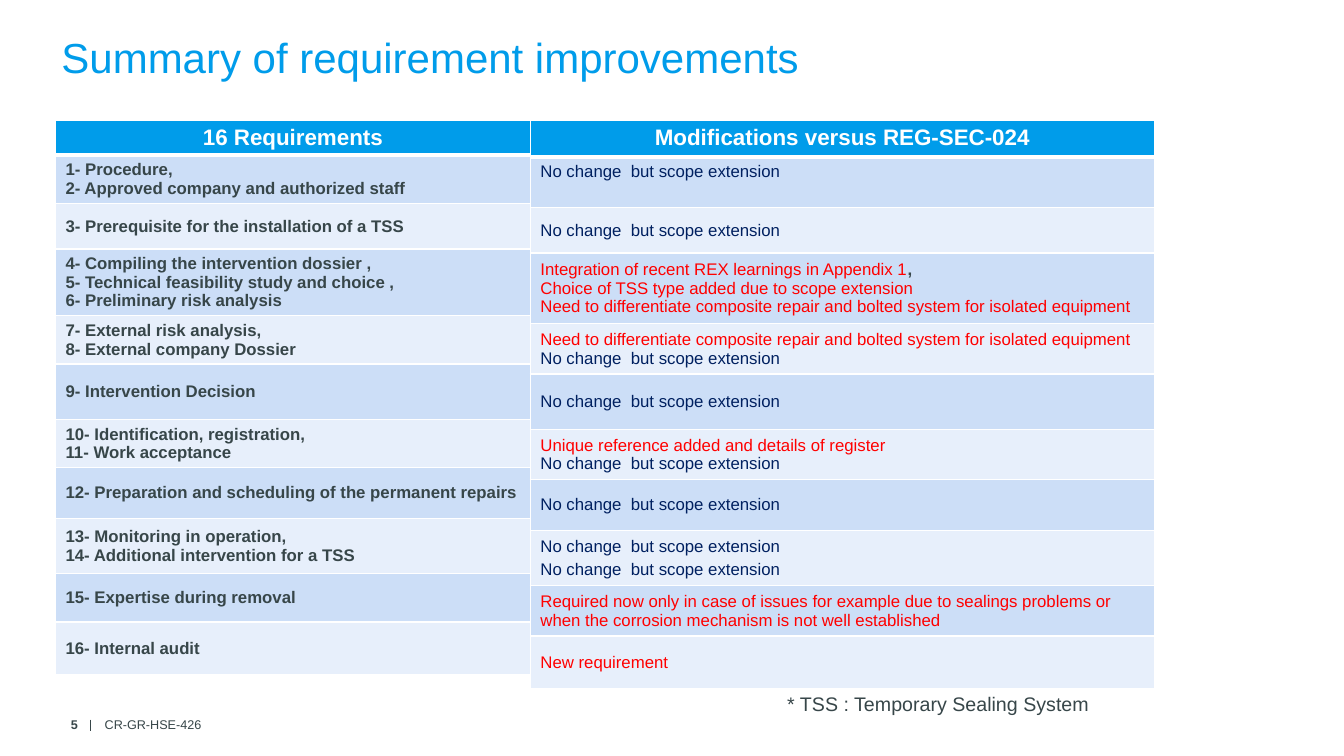
from dataclasses import dataclass

from lxml import etree
from pptx import Presentation
from pptx.dml.color import RGBColor
from pptx.enum import shapes, text
from pptx.oxml import ns
from pptx.util import Inches, Pt


# Theme: colours and type sizes
@dataclass(frozen=True)
class Theme:
    face: str = "Arial"
    blue: str = "009CEA"
    grey: str = "374649"
    navy: str = "002060"
    red: str = "FF0000"
    white: str = "FFFFFF"
    bands: tuple[str, str] = ("CCDEF7", "E7EFFB")
    title: int = 30
    head: int = 16
    note: int = 14
    body: int = 12
    foot: int = 9


T = Theme()


@dataclass
class Line:
    words: str
    color: str = T.navy
    bold: bool = False
    tail: str = ""


@dataclass
class Row:
    height: float
    lines: list[Line]
    gap: int = 0
    top: bool = False


@dataclass
class Grid:
    left: float
    width: float
    head: str
    rise: float
    rows: list[Row]


@dataclass
class Label:
    words: str
    box: tuple[float, float, float, float]
    size: int
    bold: bool = False
    align: text.PP_ALIGN = text.PP_ALIGN.LEFT
    anchor: text.MSO_ANCHOR = text.MSO_ANCHOR.MIDDLE


def need(height: float, *names: str) -> Row:
    return Row(height, [Line(n, T.grey, True) for n in names])


# Content
SAME = Line("No change  but scope extension")
SPLIT = Line("Need to differentiate composite repair and bolted system "
             "for isolated equipment", T.red)
TOP = 1.19

GRIDS = [
    Grid(0.55, 4.71, "16 Requirements", 0.35, [
        need(0.48, "1- Procedure,", "2- Approved company and authorized staff"),
        need(0.45, "3- Prerequisite for the installation of a TSS"),
        need(0.66, "4- Compiling the intervention dossier ,",
             "5- Technical feasibility study and choice ,",
             "6- Preliminary risk analysis"),
        need(0.48, "7- External risk analysis,", "8- External company Dossier"),
        need(0.55, "9- Intervention Decision"),
        need(0.48, "10- Identification, registration,", "11- Work acceptance"),
        need(0.5, "12- Preparation and scheduling of the permanent repairs"),
        need(0.55, "13- Monitoring in operation,",
             "14- Additional intervention for a TSS"),
        need(0.48, "15- Expertise during removal"),
        need(0.52, "16- Internal audit"),
    ]),
    Grid(5.26, 6.19, "Modifications versus REG-SEC-024", 0.37, [
        Row(0.5, [SAME], top=True),
        Row(0.45, [SAME]),
        Row(0.7, [
            Line("Integration of recent REX learnings in Appendix 1", T.red, tail=","),
            Line("Choice of TSS type added due to scope extension", T.red),
            SPLIT]),
        Row(0.5, [SPLIT, SAME]),
        Row(0.55, [SAME]),
        Row(0.5, [Line("Unique reference added and details of register", T.red), SAME]),
        Row(0.5, [SAME]),
        Row(0.55, [SAME, SAME], gap=3),
        Row(0.5, [Line("Required now only in case of issues for example due to "
                       "sealings problems or when the corrosion mechanism is "
                       "not well established", T.red)]),
        Row(0.52, [Line("New requirement", T.red)]),
    ]),
]

LABELS = [
    Label("CR-GR-HSE-426", (0.94, 7.05, 3.94, 0.28), T.foot),
    Label("5", (0.24, 7.05, 0.63, 0.28), T.foot, True, text.PP_ALIGN.RIGHT),
    Label("* TSS : Temporary Sealing System", (7.71, 6.82, 3.44, 0.34), T.note,
          anchor=text.MSO_ANCHOR.TOP),
]


# Drawing helpers
def style(font, size: int, color: str, bold: bool = False) -> None:
    font.name, font.size, font.bold = T.face, Pt(size), bold
    font.color.rgb = RGBColor.from_string(color)


def edge(cell, top: int = 1, base: int = 1) -> None:
    props = cell._tc.get_or_add_tcPr()
    for side, width in (("L", 1), ("R", 1), ("T", top), ("B", base)):
        line = etree.SubElement(props, ns.qn(f"a:ln{side}"), w=str(Pt(width)))
        fill = etree.SubElement(line, ns.qn("a:solidFill"))
        etree.SubElement(fill, ns.qn("a:srgbClr"), val=T.white)


def paint(cell, color: str) -> None:
    cell.fill.solid()
    cell.fill.fore_color.rgb = RGBColor.from_string(color)


def write(cell, row: Row) -> None:
    cell.vertical_anchor = text.MSO_ANCHOR.TOP if row.top else text.MSO_ANCHOR.MIDDLE
    frame = cell.text_frame
    for i, line in enumerate(row.lines):
        para = frame.add_paragraph() if i else frame.paragraphs[0]
        para.add_run().text = line.words
        if row.gap:
            para.space_after = Pt(row.gap)
        style(para.font, T.body, line.color, line.bold)
        if line.tail:
            run = para.add_run()
            run.text = line.tail
            style(run.font, T.body, T.grey, True)


def draw_grid(slide, grid: Grid) -> None:
    highs = [grid.rise] + [r.height for r in grid.rows]
    table = slide.shapes.add_table(
        len(highs), 1, Inches(grid.left), Inches(TOP),
        Inches(grid.width), Inches(sum(highs))).table
    table.horz_banding = False
    for row, high in zip(table.rows, highs):
        row.height = Inches(high)
    # Header cell
    head = table.cell(0, 0)
    edge(head, base=3)
    paint(head, T.blue)
    para = head.text_frame.paragraphs[0]
    para.add_run().text = grid.head
    para.alignment = text.PP_ALIGN.CENTER
    style(para.font, T.head, T.white, True)
    # Banded body cells
    for i, row in enumerate(grid.rows):
        cell = table.cell(i + 1, 0)
        edge(cell, top=1 if i else 3)
        paint(cell, T.bands[i % 2])
        write(cell, row)


def draw_label(slide, label: Label) -> None:
    frame = slide.shapes.add_textbox(*map(Inches, label.box)).text_frame
    frame.word_wrap = True
    frame.vertical_anchor = label.anchor
    para = frame.paragraphs[0]
    para.add_run().text = label.words
    para.alignment = label.align
    style(para.font, label.size, T.grey, label.bold)


def main() -> None:
    deck = Presentation()
    deck.slide_width, deck.slide_height = Inches(13.33), Inches(7.5)
    slide = deck.slides.add_slide(deck.slide_layouts[5])

    # Title
    title = slide.shapes.title
    title.left, title.top = Inches(0.51), Inches(0.27)
    title.width, title.height = Inches(10.63), Inches(0.59)
    frame = title.text_frame
    frame.text = "Summary of requirement improvements"
    frame.vertical_anchor = text.MSO_ANCHOR.MIDDLE
    frame.paragraphs[0].alignment = text.PP_ALIGN.LEFT
    style(frame.paragraphs[0].font, T.title, T.blue)

    # Tables and labels
    for grid in GRIDS:
        draw_grid(slide, grid)
    for label in LABELS:
        draw_label(slide, label)

    # Footer divider
    bar = slide.shapes.add_connector(
        shapes.MSO_CONNECTOR.STRAIGHT,
        Inches(0.9), Inches(7.14), Inches(0.9), Inches(7.25))
    bar.line.width = Pt(1)
    bar.line.color.rgb = RGBColor.from_string(T.grey)
    etree.SubElement(bar._element.spPr, ns.qn("a:effectLst"))

    deck.save("out.pptx")


if __name__ == "__main__":
    main()
